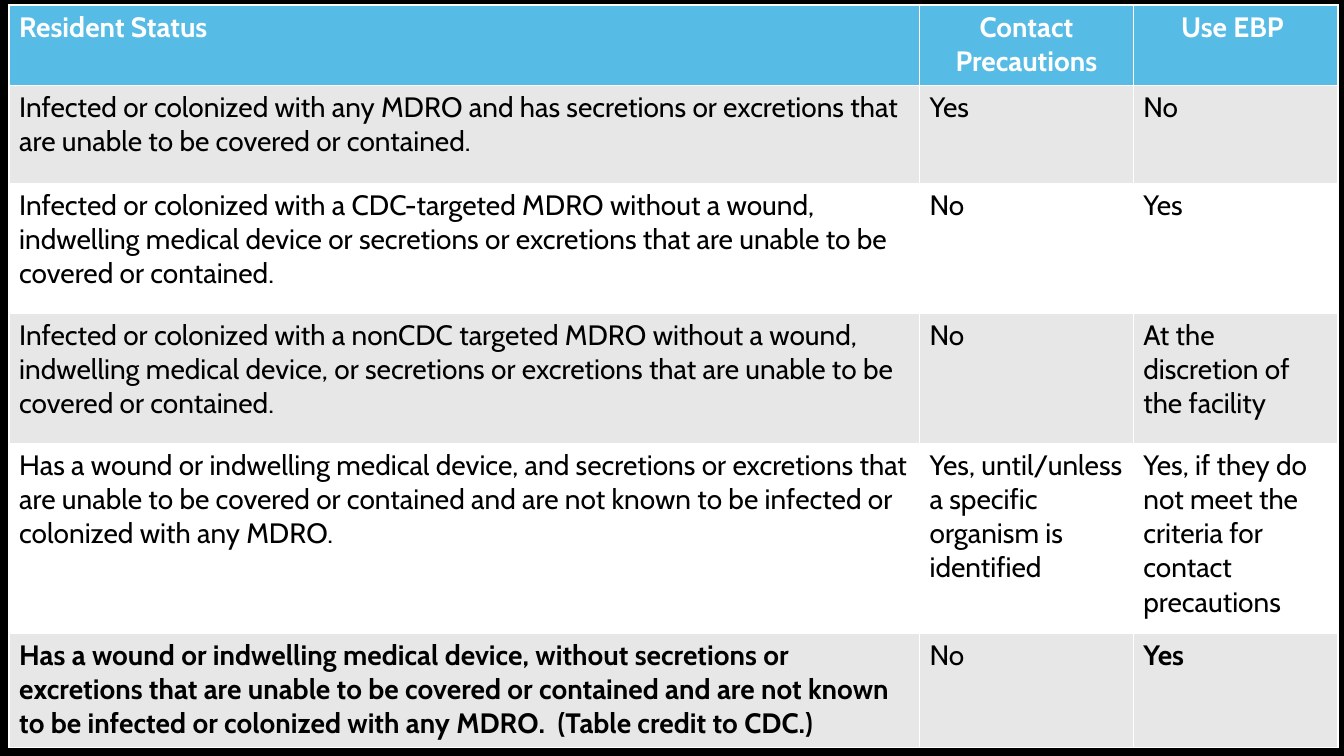
from lxml import etree
from pptx import Presentation
from pptx.dml.color import RGBColor
from pptx.enum.text import PP_ALIGN
from pptx.oxml.ns import qn
from pptx.util import Inches, Pt

CENTER, LEFT = PP_ALIGN.CENTER, PP_ALIGN.LEFT
COLORS = {
    "background": "000000",
    "header": "57BCE5",
    "band": "E7E7E7",
    "white": "FFFFFF",
    "text": "000000",
}
COLUMN_WIDTHS = [9.03, 2.12, 2.03]
ROW_HEIGHTS = [0.8, 0.97, 1.29, 1.29, 1.88, 1.14]
ROWS = [
    ("Resident Status", "Contact Precautions", "Use EBP "),
    ("Infected or colonized with any MDRO and has secretions or excretions "
     "that are unable to be covered or contained. ", "Yes", "No"),
    ("Infected or colonized with a CDC-targeted MDRO without a wound, "
     "indwelling medical device or secretions or excretions that are unable "
     "to be covered or contained. ", "No", "Yes"),
    ("Infected or colonized with a nonCDC targeted MDRO without a wound, "
     "indwelling medical device, or secretions or excretions that are unable "
     "to be covered or contained. ", "No", "At the discretion of the facility"),
    ("Has a wound or indwelling medical device, and secretions or excretions "
     "that are unable to be covered or contained and are not known to be "
     "infected or colonized with any MDRO. ",
     "Yes, until/unless a specific organism is identified",
     "Yes, if they do not meet the criteria for contact precautions"),
    ("Has a wound or indwelling medical device, without secretions or "
     "excretions that are unable to be covered or contained and are not known "
     "to be infected or colonized with any MDRO.  (Table credit to CDC.)",
     "No", "Yes"),
]
LAST_ROW = len(ROWS) - 1


def color(name):
    return RGBColor.from_string(COLORS[name])


def add_borders(cell):
    """Draw a thin white line on every side of the cell."""
    properties = cell._tc.get_or_add_tcPr()
    for position, side in enumerate(("a:lnL", "a:lnR", "a:lnT", "a:lnB")):
        line = etree.Element(qn(side), w=str(Pt(1)))
        fill = etree.SubElement(line, qn("a:solidFill"))
        etree.SubElement(fill, qn("a:srgbClr"), val=COLORS["white"])
        properties.insert(position, line)


# Slide with a black background
presentation = Presentation()
presentation.slide_width = Inches(13.33)
presentation.slide_height = Inches(7.5)
slide = presentation.slides.add_slide(presentation.slide_layouts[6])
slide.background.fill.solid()
slide.background.fill.fore_color.rgb = color("background")

# Table grid
table = slide.shapes.add_table(
    len(ROWS), len(COLUMN_WIDTHS), Inches(0.09), Inches(0.05),
    Inches(sum(COLUMN_WIDTHS)), Inches(sum(ROW_HEIGHTS))).table
for column, width in zip(table.columns, COLUMN_WIDTHS):
    column.width = Inches(width)
for row, height in zip(table.rows, ROW_HEIGHTS):
    row.height = Inches(height)

# Cells: blue header, then grey and white bands
for row_index, texts in enumerate(ROWS):
    is_header = row_index == 0
    fill_name = "header" if is_header else "band" if row_index % 2 else "white"
    for column_index, text in enumerate(texts):
        cell = table.cell(row_index, column_index)
        cell.fill.solid()
        cell.fill.fore_color.rgb = color(fill_name)
        add_borders(cell)
        cell.text = text
        paragraph = cell.text_frame.paragraphs[0]
        paragraph.alignment = CENTER if is_header and column_index else LEFT
        paragraph.font.name = "Cabin"
        paragraph.font.size = Pt(20)
        paragraph.font.bold = is_header or (
            row_index == LAST_ROW and column_index != 1)
        paragraph.font.color.rgb = color("white" if is_header else "text")

presentation.save("out.pptx")
